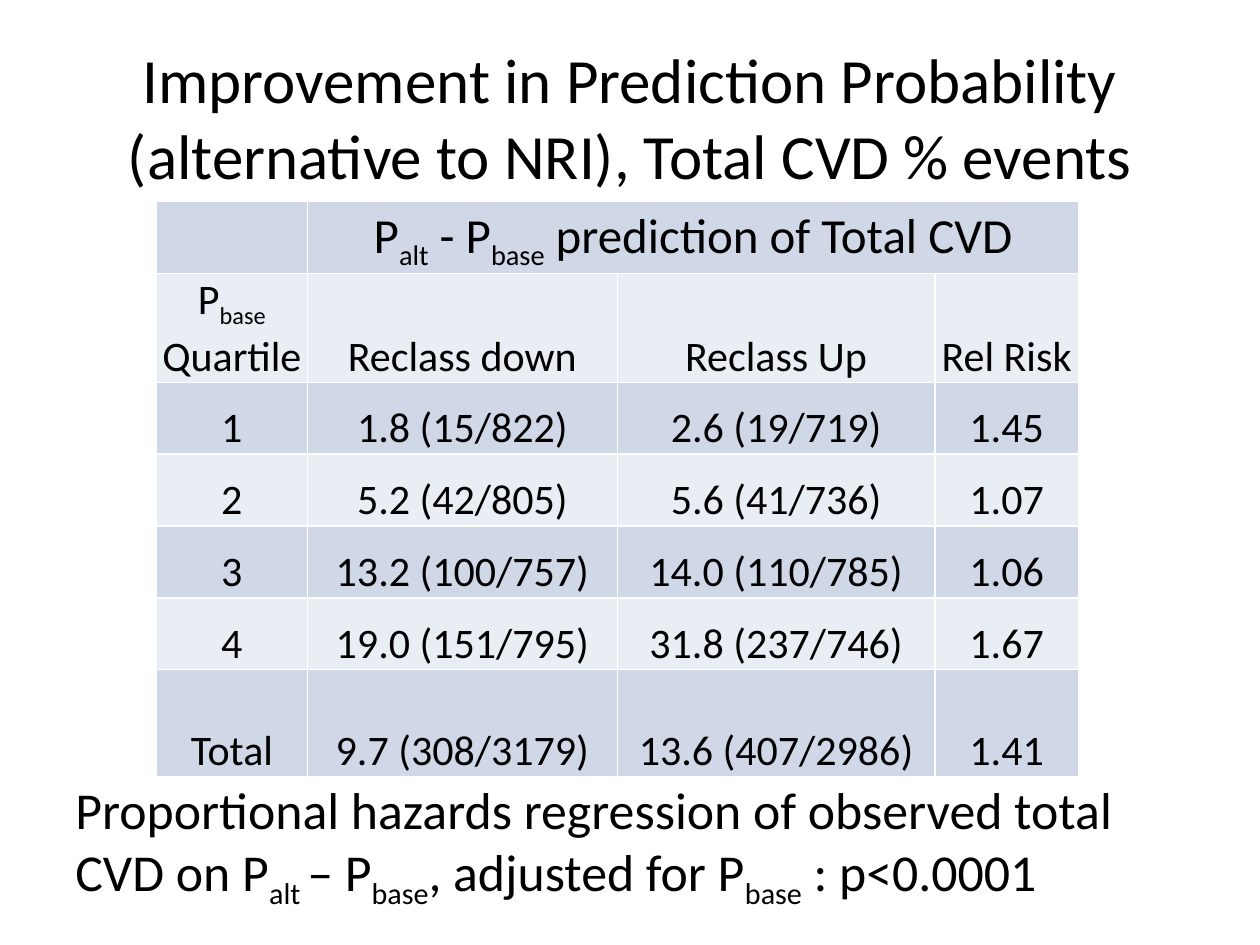
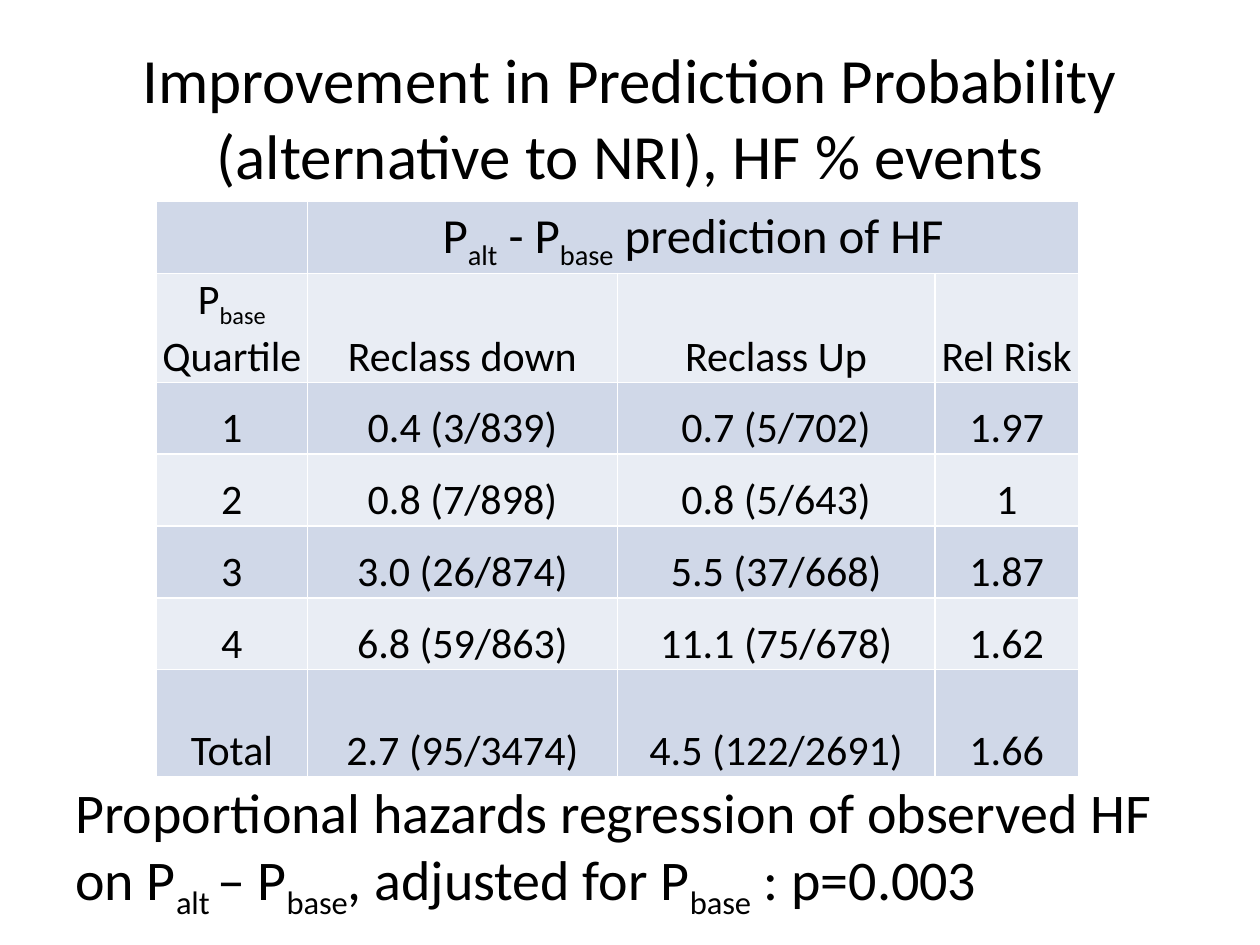
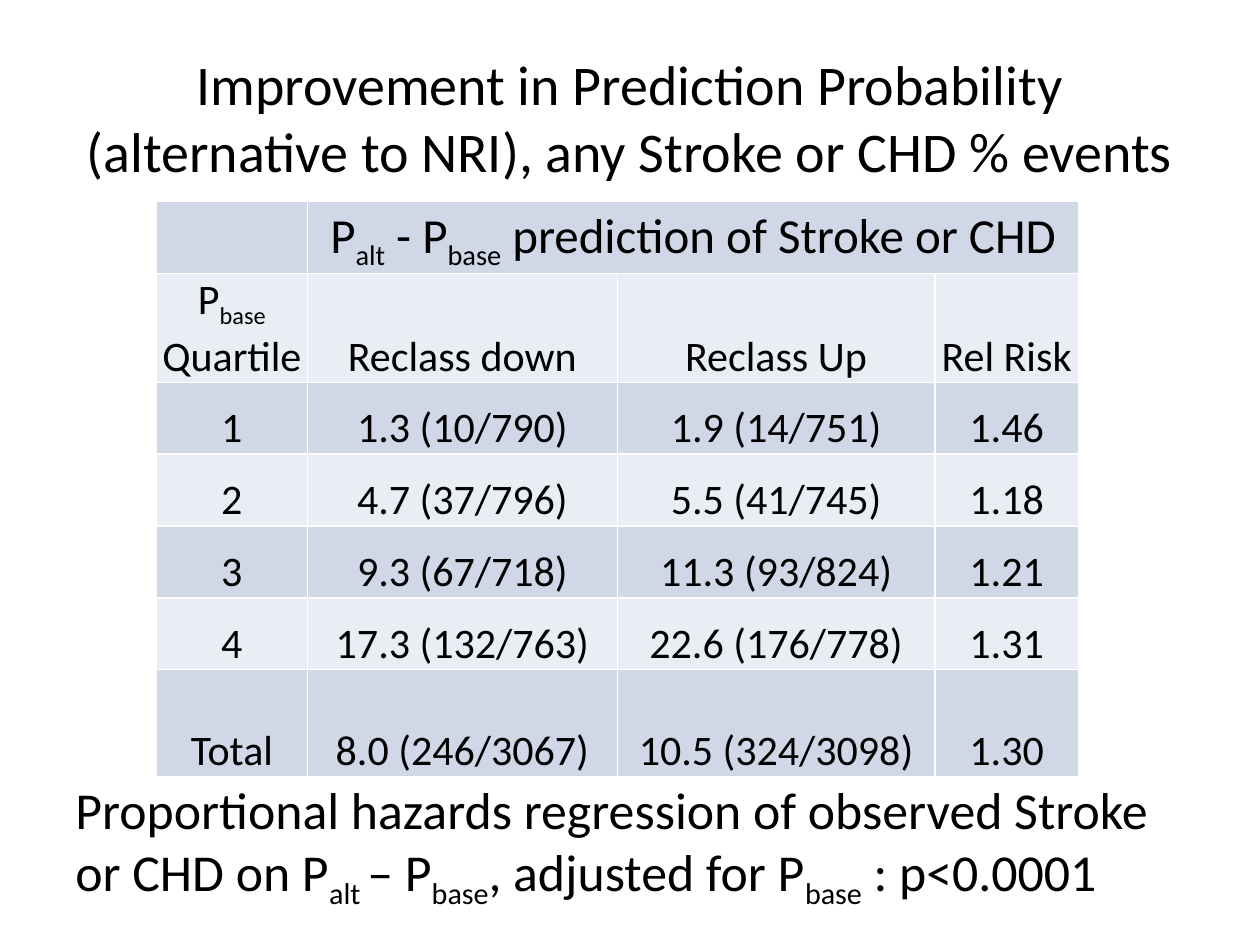
"""Build three slides on improvement in prediction probability."""
import lxml.etree
import pptx
import pptx.dml.color
import pptx.enum.text
import pptx.oxml.ns
import pptx.util

BLACK = pptx.dml.color.RGBColor(0x00, 0x00, 0x00)
WHITE = pptx.dml.color.RGBColor(0xFF, 0xFF, 0xFF)
BANDS = (pptx.dml.color.RGBColor(0xD0, 0xD8, 0xE8),
         pptx.dml.color.RGBColor(0xE9, 0xED, 0xF4))
FONT = "Calibri"

GRID_UNIT = pptx.util.Inches(1)
SLIDE_COLUMNS, SLIDE_ROWS = 10, 7.5
MARGIN = 0.5
CONTENT_WIDTH = SLIDE_COLUMNS - 2 * MARGIN
TITLE_TOP, TITLE_HEIGHT = 0.3, 1.25
TABLE_LEFT, TABLE_TOP, TABLE_HEIGHT = 1.24, 1.6, 4.52
FINDING_TOP, FINDING_HEIGHT = TABLE_TOP + TABLE_HEIGHT, 1.16
COLUMN_WIDTHS = (1.2, 2.46, 2.52, 1.14)
ROW_HEIGHTS = (0.57,) * 6 + (0.85,)
CELL_INSET = 0.01

CENTER = pptx.enum.text.PP_ALIGN.CENTER
LEFT = pptx.enum.text.PP_ALIGN.LEFT
TOP = pptx.enum.text.MSO_ANCHOR.TOP
MIDDLE = pptx.enum.text.MSO_ANCHOR.MIDDLE
BOTTOM = pptx.enum.text.MSO_ANCHOR.BOTTOM

HEADINGS = ("P[base] Quartile", "Reclass down", "Reclass Up", "Rel Risk")
QUARTILES = ("1", "2", "3", "4", "Total")

OUTCOMES = (
    dict(title_outcome="Total CVD", outcome="Total CVD", observed="total CVD",
         p_value="p<0.0001", title_size=36, finding_size=29.6,
         rates=(("1.8 (15/822)", "2.6 (19/719)", "1.45"),
                ("5.2 (42/805)", "5.6 (41/736)", "1.07"),
                ("13.2 (100/757)", "14.0 (110/785)", "1.06"),
                ("19.0 (151/795)", "31.8 (237/746)", "1.67"),
                ("9.7 (308/3179)", "13.6 (407/2986)", "1.41"))),
    dict(title_outcome="HF", outcome="HF", observed="HF",
         p_value="p=0.003", title_size=36, finding_size=32,
         rates=(("0.4 (3/839)", "0.7 (5/702)", "1.97"),
                ("0.8 (7/898)", "0.8 (5/643)", "1"),
                ("3.0 (26/874)", "5.5 (37/668)", "1.87"),
                ("6.8 (59/863)", "11.1 (75/678)", "1.62"),
                ("2.7 (95/3474)", "4.5 (122/2691)", "1.66"))),
    dict(title_outcome="any Stroke or CHD", outcome="Stroke or CHD",
         observed="Stroke or CHD",
         p_value="p<0.0001", title_size=32, finding_size=29.6,
         rates=(("1.3 (10/790)", "1.9 (14/751)", "1.46"),
                ("4.7 (37/796)", "5.5 (41/745)", "1.18"),
                ("9.3 (67/718)", "11.3 (93/824)", "1.21"),
                ("17.3 (132/763)", "22.6 (176/778)", "1.31"),
                ("8.0 (246/3067)", "10.5 (324/3098)", "1.30"))),
)


def grid(units):
    """Convert grid units to a slide length."""
    return pptx.util.Emu(round(units * GRID_UNIT))


def write(text_frame, text, size, align=LEFT):
    """Write one paragraph, setting the parts in square brackets as subscripts."""
    paragraph = text_frame.paragraphs[0]
    paragraph.alignment = align
    for index, part in enumerate(text.replace("]", "[").split("[")):
        if not part:
            continue
        run = paragraph.add_run()
        run.text = part
        run.font.name = FONT
        run.font.size = pptx.util.Pt(size)
        run.font.color.rgb = BLACK
        if index % 2:
            run._r.get_or_add_rPr().set("baseline", "-25000")


def add_text(slide, text, top, height, anchor=TOP, **text_format):
    """Add a wrapped text box across the content width."""
    box = slide.shapes.add_textbox(
        grid(MARGIN), grid(top), grid(CONTENT_WIDTH), grid(height))
    box.text_frame.word_wrap = True
    box.text_frame.vertical_anchor = anchor
    write(box.text_frame, text, **text_format)


def add_borders(cell):
    """Draw thin white lines on all four sides of a cell."""
    properties = cell._tc.get_or_add_tcPr()
    qn = pptx.oxml.ns.qn
    for side in ("a:lnL", "a:lnR", "a:lnT", "a:lnB"):
        line = lxml.etree.SubElement(
            properties, qn(side), w=str(pptx.util.Pt(1)))
        fill = lxml.etree.SubElement(line, qn("a:solidFill"))
        lxml.etree.SubElement(fill, qn("a:srgbClr"), val=str(WHITE))


def style_cell(cell, band):
    """Give a cell its borders, band colour, insets and anchor."""
    add_borders(cell)
    cell.fill.solid()
    cell.fill.fore_color.rgb = band
    cell.margin_left = cell.margin_right = cell.margin_top = grid(CELL_INSET)
    cell.margin_bottom = 0
    cell.vertical_anchor = BOTTOM


def add_risk_table(slide, outcome, rates):
    """Add the reclassification table for one outcome."""
    rows = [("", f"P[alt] - P[base] prediction of {outcome}", "", ""), HEADINGS]
    rows += [(quartile, *rate) for quartile, rate in zip(QUARTILES, rates)]
    frame = slide.shapes.add_table(
        len(rows), len(HEADINGS), grid(TABLE_LEFT), grid(TABLE_TOP),
        grid(sum(COLUMN_WIDTHS)), grid(TABLE_HEIGHT))
    table = frame.table
    table.first_row = table.horz_banding = False
    for column, width in zip(table.columns, COLUMN_WIDTHS):
        column.width = grid(width)
    for row, height in zip(table.rows, ROW_HEIGHTS):
        row.height = grid(height)
    frame.height = grid(TABLE_HEIGHT)
    for row_index, row in enumerate(rows):
        size = 24 if row_index else 28
        for column_index, text in enumerate(row):
            cell = table.cell(row_index, column_index)
            style_cell(cell, BANDS[row_index % 2])
            write(cell.text_frame, text, size=size, align=CENTER)
    table.cell(0, 1).merge(table.cell(0, len(HEADINGS) - 1))


def add_outcome_slide(deck, title_outcome, outcome, observed, p_value,
                      title_size, finding_size, rates):
    """Add a slide with title, regression finding and table for one outcome."""
    slide = deck.slides.add_slide(deck.slide_layouts[6])
    add_text(slide, "Improvement in Prediction Probability "
             f"(alternative to NRI), {title_outcome} % events",
             TITLE_TOP, TITLE_HEIGHT, anchor=MIDDLE,
             size=title_size, align=CENTER)
    add_text(slide, f"Proportional hazards regression of observed {observed} on "
             f"P[alt ]– P[base], adjusted for P[base] : {p_value}",
             FINDING_TOP, FINDING_HEIGHT, size=finding_size)
    add_risk_table(slide, outcome, rates)


def main():
    """Build and save the deck."""
    deck = pptx.Presentation()
    deck.slide_width = grid(SLIDE_COLUMNS)
    deck.slide_height = grid(SLIDE_ROWS)
    for outcome in OUTCOMES:
        add_outcome_slide(deck, **outcome)
    deck.save("out.pptx")


if __name__ == "__main__":
    main()
